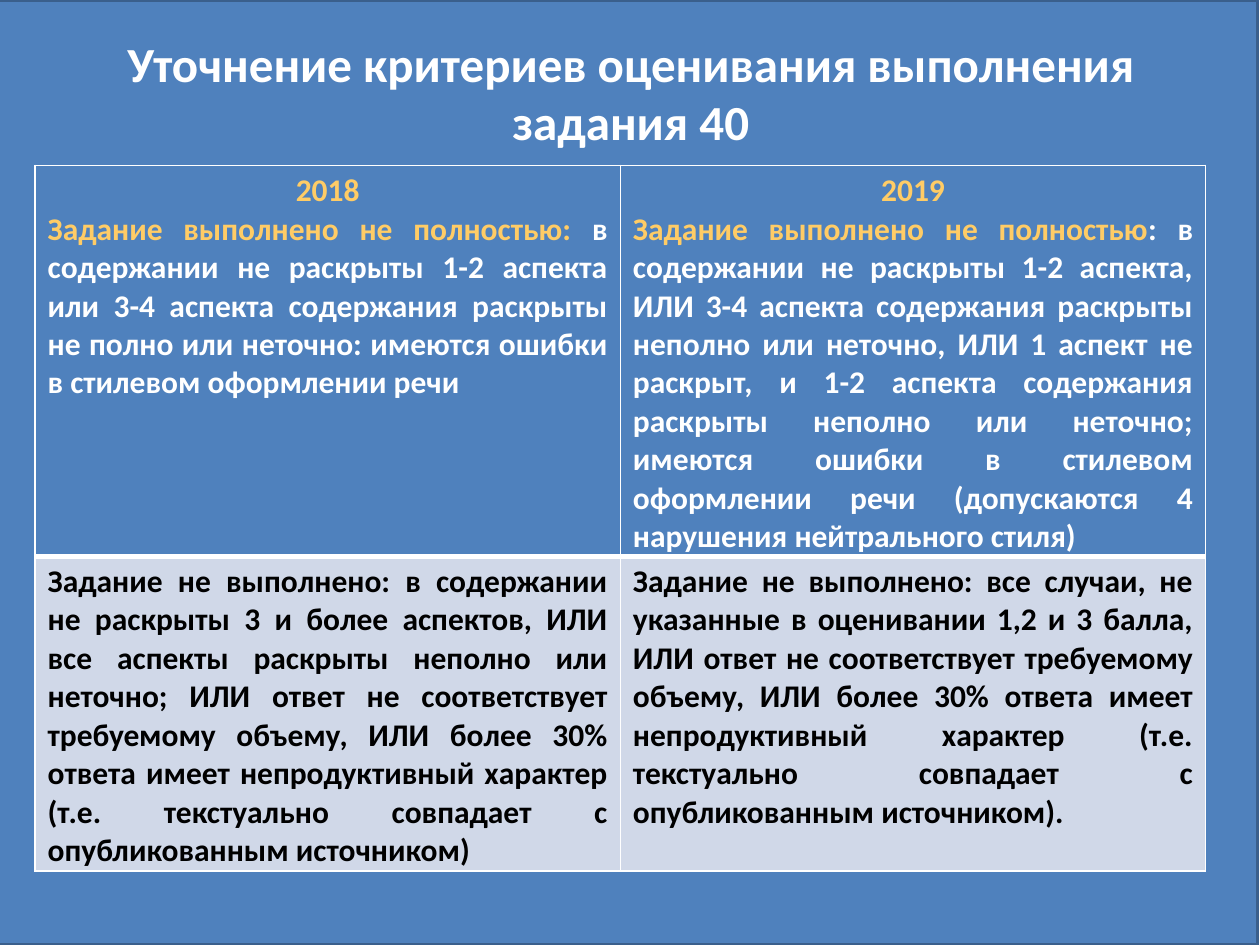
from lxml import etree
from pptx import Presentation
from pptx import util as u
from pptx.dml import color
from pptx.enum import shapes, text
from pptx.oxml import ns

COLORS = {
    "blue": "4F81BD",
    "outline": "3A5F8C",
    "pale": "D0D8E8",
    "white": "FFFFFF",
    "gold": "FFCC66",
    "black": "000000",
}
CENTER, JUSTIFY = text.PP_ALIGN.CENTER, text.PP_ALIGN.JUSTIFY


def add_text(paragraph, content, size=18, color_name="white", align=JUSTIFY):
    paragraph.alignment = align
    run = paragraph.add_run()
    run.text = content
    run.font.name = "Calibri"
    run.font.size = u.Pt(size)
    run.font.bold = True
    run.font.color.rgb = color.RGBColor.from_string(COLORS[color_name])


def add_border(cell, side, width):
    properties = cell._tc.get_or_add_tcPr()
    line = etree.SubElement(properties, ns.qn(f"a:ln{side}"), w=str(u.Pt(width)))
    fill = etree.SubElement(line, ns.qn("a:solidFill"))
    etree.SubElement(fill, ns.qn("a:srgbClr"), val=COLORS["white"])


presentation = Presentation()
presentation.slide_width = u.Pt(720)
presentation.slide_height = u.Pt(540)
slide = presentation.slides.add_slide(presentation.slide_layouts[5])

title = slide.shapes.title
title.left, title.top, title.width, title.height = u.Pt(14.4), u.Pt(15), u.Pt(692), u.Pt(75)
add_text(title.text_frame.paragraphs[0],
         "Уточнение критериев оценивания выполнения задания 40", size=28, align=CENTER)

backdrop = slide.shapes.add_shape(
    shapes.MSO_SHAPE.RECTANGLE, u.Pt(-1.5), u.Pt(0), u.Pt(720), u.Pt(540))
backdrop.shadow.inherit = False
backdrop.fill.solid()
backdrop.fill.fore_color.rgb = color.RGBColor.from_string(COLORS["blue"])
backdrop.line.color.rgb = color.RGBColor.from_string(COLORS["outline"])
backdrop.line.width = u.Pt(2)
title.element.addprevious(backdrop.element)

criteria = [
    [
        [
            (CENTER, [("2018", "gold")]),
            (JUSTIFY, [
                ("Задание выполнено не полностью: ", "gold"),
                ("в содержании не раскрыты 1-2 аспекта или 3-4 аспекта содержания раскрыты "
                 "не полно или неточно: имеются ошибки в стилевом оформлении речи", "white"),
            ]),
        ],
        [
            (CENTER, [("2019", "gold")]),
            (JUSTIFY, [
                ("Задание выполнено не полностью", "gold"),
                (": в содержании не раскрыты 1-2 аспекта, ИЛИ 3-4 аспекта содержания раскрыты "
                 "неполно или неточно, ИЛИ 1 аспект не раскрыт, и 1-2 аспекта содержания "
                 "раскрыты неполно или неточно; имеются ошибки в стилевом оформлении речи "
                 "(допускаются 4 нарушения нейтрального стиля)", "white"),
            ]),
        ],
    ],
    [
        [(JUSTIFY, [
            ("Задание не выполнено: в содержании не раскрыты 3 и более аспектов, ИЛИ все "
             "аспекты раскрыты неполно или неточно; ИЛИ ответ не соответствует требуемому "
             "объему, ИЛИ более 30% ответа имеет непродуктивный характер (т.е. текстуально "
             "совпадает с опубликованным источником)", "black"),
        ])],
        [(JUSTIFY, [
            ("Задание не выполнено: все случаи, не указанные в оценивании 1,2 и 3 балла, ИЛИ "
             "ответ не соответствует требуемому объему, ИЛИ более 30% ответа имеет "
             "непродуктивный характер (т.е. текстуально совпадает с опубликованным "
             "источником).", "black"),
        ])],
    ],
]
row_heights = [223, 180]
row_fills = ["blue", "pale"]
row_borders = [{"L": 1, "R": 1, "T": 1, "B": 3}, {"L": 1, "R": 1, "T": 3, "B": 1}]

table = slide.shapes.add_table(
    2, 2, u.Pt(20), u.Pt(94.5), u.Pt(669), u.Pt(sum(row_heights))).table
for row_index, row in enumerate(criteria):
    table.rows[row_index].height = u.Pt(row_heights[row_index])
    for column_index, paragraphs in enumerate(row):
        cell = table.cell(row_index, column_index)
        cell.margin_bottom = u.Pt(0)
        for side, width in row_borders[row_index].items():
            add_border(cell, side, width)
        cell.fill.solid()
        cell.fill.fore_color.rgb = color.RGBColor.from_string(COLORS[row_fills[row_index]])
        for paragraph_index, (align, runs) in enumerate(paragraphs):
            frame = cell.text_frame
            paragraph = frame.add_paragraph() if paragraph_index else frame.paragraphs[0]
            for content, color_name in runs:
                add_text(paragraph, content, color_name=color_name, align=align)

presentation.save("out.pptx")
